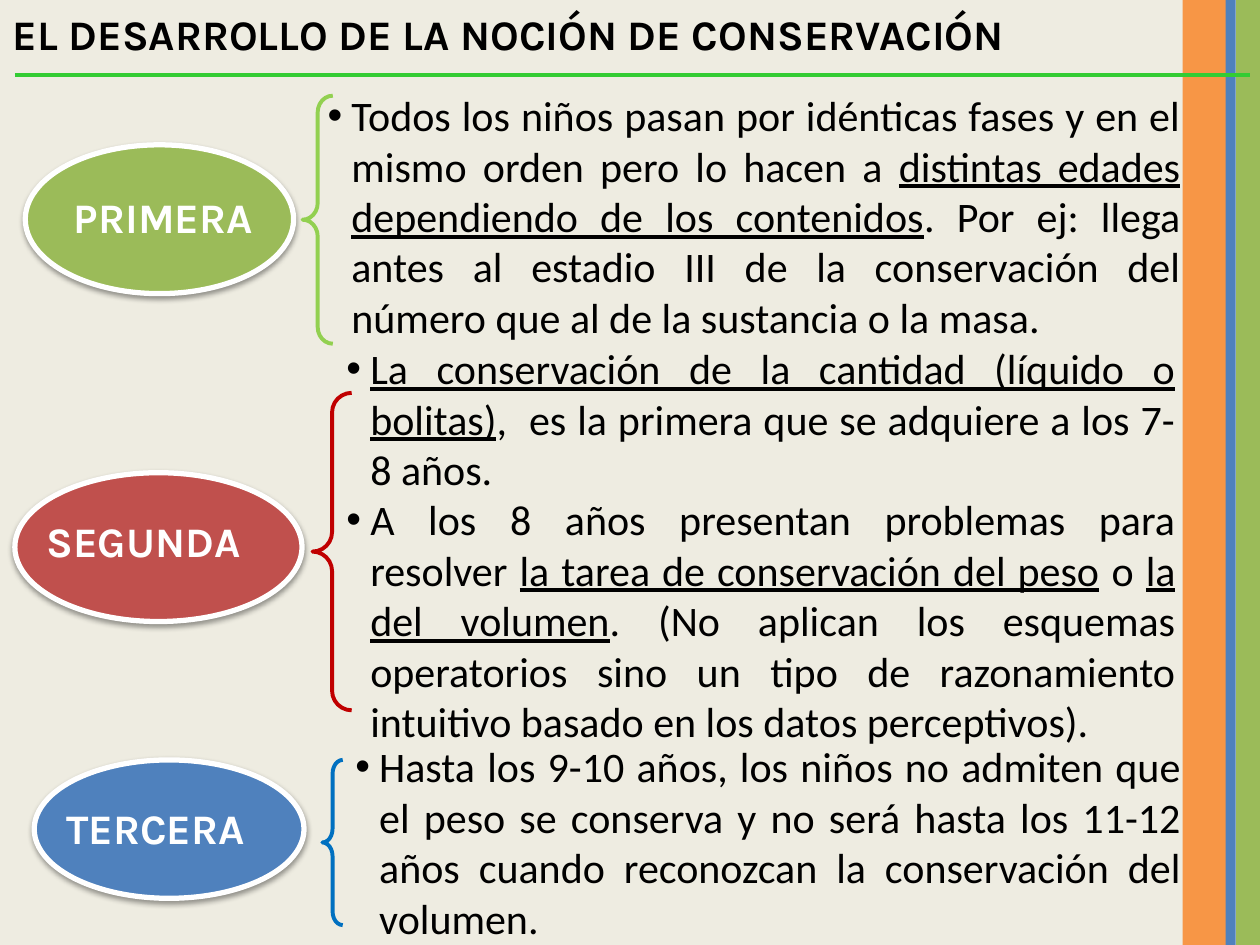
from dataclasses import dataclass
from itertools import cycle

from lxml.etree import SubElement
from pptx import Presentation
from pptx.dml.color import RGBColor
from pptx.enum.shapes import MSO_CONNECTOR as Connector, MSO_SHAPE as Preset
from pptx.enum.text import MSO_ANCHOR as Anchor, MSO_AUTO_SIZE as AutoSize, PP_ALIGN as Align
from pptx.oxml.ns import qn
from pptx.util import Cm, Pt

COLORS = {
    "paper": "EEECE1", "ink": "000000", "white": "FFFFFF", "rule": "33CC33",
    "orange": "F79646", "blue": "4F81BD", "green": "9BBB59", "red": "C0504D",
    "lime": "92D050", "crimson": "C00000", "azure": "0070C0",
}
HEADING = {"name": "Karla", "size": Pt(24), "bold": True}
BODY = {"name": "Calibri", "size": Pt(24), "bold": False}
PAGE_WIDTH, PAGE_HEIGHT = 25.4, 19.05


@dataclass
class Area:
    left: float
    top: float
    width: float
    height: float

    def lengths(self) -> list:
        return [Cm(value) for value in (self.left, self.top, self.width, self.height)]


@dataclass
class Stage:
    name: str
    fill: str
    oval: Area
    label: Area
    align: Align
    brace: Area
    brace_color: str
    curl: float
    list_area: Area
    holder: int
    items: list  # underlined words stand between bars


STAGES = [
    Stage("PRIMERA", "green", Area(0.51, 2.92, 5.41, 3), Area(0.3, 3.73, 5.99, 1.27),
          Align.CENTER, Area(6.1, 1.93, 0.61, 5), "lime", 0.55,
          Area(6.35, 1.68, 17.7, 5.38), 1,
          ["Todos los niños pasan por idénticas fases y en el mismo orden pero lo hacen a "
           "|distintas edades| |dependiendo de los contenidos|. Por ej: llega antes al "
           "estadio III de la conservación del número que al de la sustancia o la masa."]),
    Stage("SEGUNDA", "red", Area(0.3, 9.53, 5.79, 3), Area(0.69, 10.26, 5.21, 1.27),
          Align.LEFT, Area(6.3, 7.92, 0.79, 6.4), "crimson", 0.5,
          Area(6.73, 6.78, 17.22, 8.46), 2,
          ["|La conservación de la cantidad (líquido o bolitas)|,  es la primera que se "
           "adquiere a los 7-8 años.",
           "A los 8 años presentan problemas para resolver |la tarea de conservación del "
           "peso| o |la del volumen|. (No aplican los esquemas operatorios sino un tipo de "
           "razonamiento intuitivo basado en los datos perceptivos)."]),
    Stage("TERCERA", "blue", Area(0.69, 15.32, 5.44, 2.79), Area(1.09, 16.05, 4.8, 1.27),
          Align.LEFT, Area(6.5, 15.32, 0.41, 3.33), "azure", 0.68,
          Area(6.91, 14.81, 17.15, 4.37), 3,
          ["Hasta los 9-10 años, los niños no admiten que el peso se conserva y no será "
           "hasta los 11-12 años cuando reconozcan la conservación del volumen."]),
]


def color(name: str) -> RGBColor:
    return RGBColor.from_string(COLORS[name])


def move(shape, area: Area) -> None:
    for name, value in zip(("left", "top", "width", "height"), area.lengths()):
        setattr(shape, name, value)


def prepare_frame(shape):
    frame = shape.text_frame
    settings = {"word_wrap": True, "auto_size": AutoSize.NONE, "vertical_anchor": Anchor.TOP}
    for name, value in settings.items():
        setattr(frame, name, value)
    return frame


def add_span(para, text: str, style: dict, ink: str) -> None:
    span = para.add_run()
    span.text = text
    for name, value in style.items():
        setattr(span.font, name, value)
    span.font.color.rgb = color(ink)


def add_heading(shape, text: str, ink: str, align: Align = Align.LEFT) -> None:
    para = prepare_frame(shape).paragraphs[0]
    para.alignment = align
    add_span(para, text, HEADING, ink)


def add_preset(page, preset, area: Area, fill: str = "", line: str = "", weight: float = 0):
    shape = page.shapes.add_shape(preset, *area.lengths())
    shape.shadow.inherit = False
    if fill:
        shape.fill.solid()
        shape.fill.fore_color.rgb = color(fill)
    else:
        shape.fill.background()
    if line:
        shape.line.color.rgb = color(line)
        shape.line.width = Pt(weight)
    else:
        shape.line.fill.background()
    return shape


def add_soft_shadow(shape) -> None:
    effects = shape._element.spPr.find(qn("a:effectLst"))
    shadow = SubElement(effects, qn("a:outerShdw"), blurRad="40000", dist="20000",
                        dir="5400000", rotWithShape="0")
    black = SubElement(shadow, qn("a:srgbClr"), val=COLORS["ink"])
    SubElement(black, qn("a:alpha"), val="38000")


def fill_list(box, items: list) -> None:
    frame = prepare_frame(box)
    for number, item in enumerate(items):
        para = frame.add_paragraph() if number else frame.paragraphs[0]
        layout = {"alignment": Align.JUSTIFY, "space_before": Pt(0), "space_after": Pt(0)}
        for name, value in layout.items():
            setattr(para, name, value)
        # Hanging bullet
        props = para._p.get_or_add_pPr()
        props.set("marL", str(Cm(0.48)))
        props.set("indent", str(-Cm(0.48)))
        SubElement(props, qn("a:buFont"), typeface="Arial")
        SubElement(props, qn("a:buChar"), char="•")
        for text, underline in zip(item.split("|"), cycle((False, True))):
            if text:
                add_span(para, text, {**BODY, "underline": underline}, "ink")


def draw_stage(page, stage: Stage) -> None:
    oval = add_preset(page, Preset.OVAL, stage.oval, stage.fill, "white", 3)
    add_soft_shadow(oval)
    label = page.shapes.add_textbox(*stage.label.lengths())
    add_heading(label, stage.name, "white", stage.align)
    brace = add_preset(page, Preset.LEFT_BRACE, stage.brace, "", stage.brace_color, 2.25)
    brace.adjustments[0] = stage.curl
    box = page.placeholders[stage.holder]
    move(box, stage.list_area)
    fill_list(box, stage.items)


def main() -> None:
    deck = Presentation()
    deck.slide_width, deck.slide_height = Cm(PAGE_WIDTH), Cm(PAGE_HEIGHT)
    page = deck.slides.add_slide(deck.slide_layouts.get_by_name("Comparison"))
    page.background.fill.solid()
    page.background.fill.fore_color.rgb = color("paper")

    # The layout has four bodies, the slide needs three
    spare = page.placeholders[4]._element
    spare.getparent().remove(spare)

    # Stripes on the right edge
    for left, width, fill in ((23.84, 0.89, "orange"), (24.92, 0.48, "green"),
                              (24.71, 0.2, "blue")):
        add_preset(page, Preset.RECTANGLE, Area(left, 0, width, PAGE_HEIGHT), fill)

    # Title and its rule
    title = page.shapes.title
    move(title, Area(0, 0.05, PAGE_WIDTH, 1.3))
    add_heading(title, "EL DESARROLLO DE LA NOCIÓN DE CONSERVACIÓN", "ink")
    rule = page.shapes.add_connector(Connector.STRAIGHT, Cm(0.3), Cm(1.52), Cm(25.2), Cm(1.52))
    rule.line.color.rgb = color("rule")
    rule.line.width = Pt(2.25)
    SubElement(rule._element.spPr, qn("a:effectLst"))

    # Stages
    for stage in STAGES:
        draw_stage(page, stage)

    deck.save("out.pptx")


if __name__ == "__main__":
    main()
